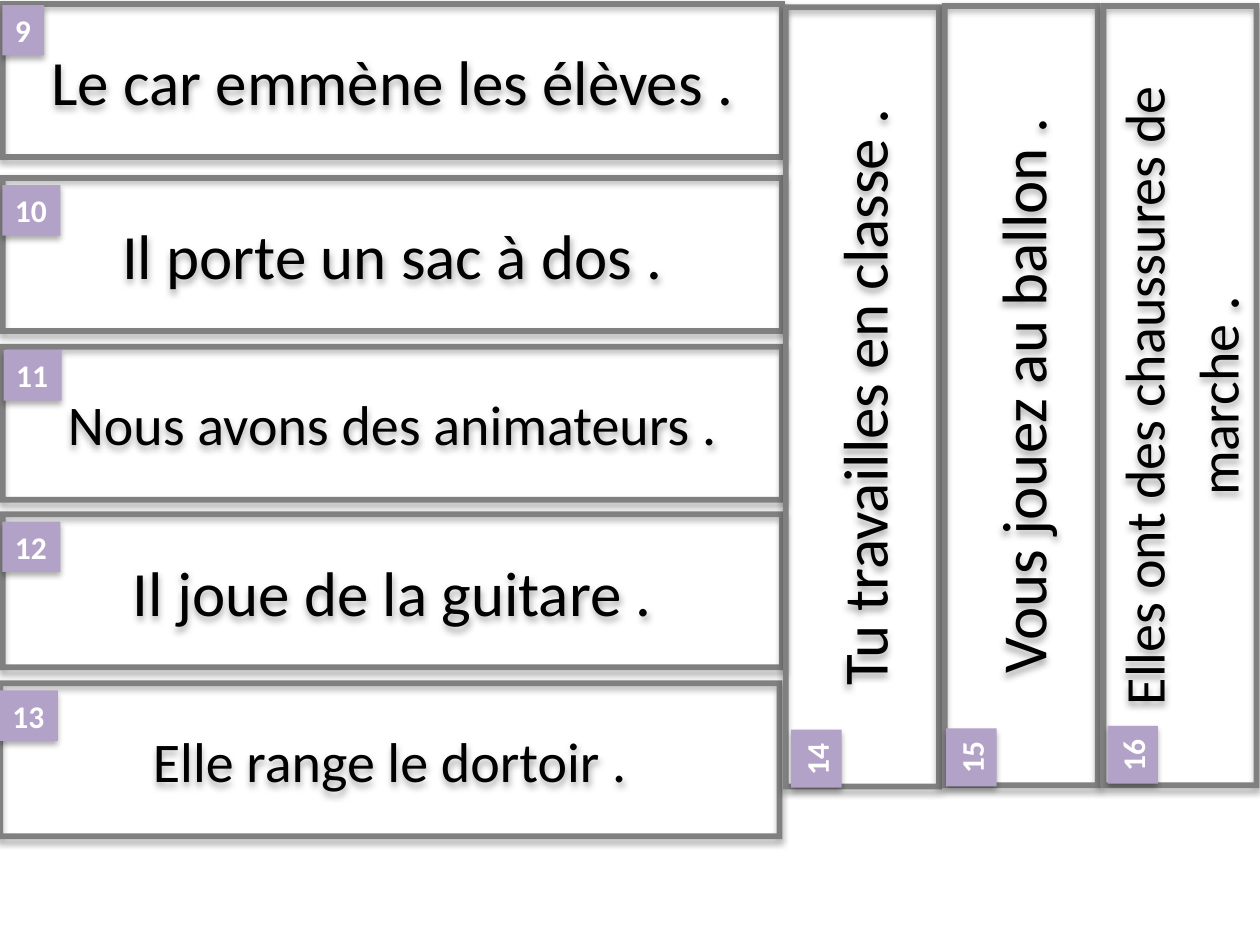
import pptx
import pptx.dml.color
import pptx.enum.shapes
import pptx.enum.text
import pptx.oxml
import pptx.oxml.ns
import pptx.util
from pptx.util import Inches

# Content: sentence parts with sizes, card position, badge position
ROW_CARDS = [
    ([("Le car emmène les élèves .", 36)], (0, 0.01), (0.02, 0.04)),
    ([("Il porte un sac à dos .", 36)], (0, 1.39), (0.02, 1.47)),
    ([("Nous avons des animateurs .", 32)], (0, 2.73), (0.03, 2.78)),
    ([("Il joue de la guitare .", 36)], (0, 4.06), (0.02, 4.14)),
    ([("Elle range le dortoir .", 32)], (-0.02, 5.4), (0, 5.48)),
]
COLUMN_CARDS = [
    ([("Tu travailles en classe .", 36)], (3.73, 2.52), (6.25, 5.82)),
    ([("Vous jouez au ballon .", 36)], (4.99, 2.51), (7.48, 5.81)),
    ([("Elles ont des chaussures de marche ", 32), (".", 36)],
     (6.25, 2.51), (8.76, 5.79)),
]
FIRST_NUMBER = 9
CARD_SIZE = (6.23, 1.26)
BADGE_HEIGHT = 0.4
FONT = "Calibri"
SHADOW = (
    '<a:outerShdw %s blurRad="44450" dist="27940" dir="5400000" algn="ctr" '
    'rotWithShape="0"><a:srgbClr val="000000"><a:alpha val="32000"/>'
    '</a:srgbClr></a:outerShdw>' % pptx.oxml.ns.nsdecls("a")
)


def color(hex_value):
    return pptx.dml.color.RGBColor.from_string(hex_value)


def add_block(slide, kind, position, size, fill, rotation):
    shape = slide.shapes.add_shape(
        kind, *(Inches(value) for value in (*position, *size)))
    shape.rotation = rotation
    shape.fill.solid()
    shape.fill.fore_color.rgb = color(fill)
    shape.line.fill.background()
    shape.shadow.inherit = False
    effects = shape._element.spPr.find(pptx.oxml.ns.qn("a:effectLst"))
    effects.append(pptx.oxml.parse_xml(SHADOW))
    return shape


def add_card(slide, parts, position, rotation):
    card = add_block(slide, pptx.enum.shapes.MSO_SHAPE.FRAME, position,
                     CARD_SIZE, "808080", rotation)
    card.adjustments[0] = 0.036
    frame = card.text_frame
    frame.word_wrap = True
    frame.vertical_anchor = pptx.enum.text.MSO_ANCHOR.MIDDLE
    paragraph = frame.paragraphs[0]
    paragraph.alignment = pptx.enum.text.PP_ALIGN.CENTER
    for text, size in parts:
        run = paragraph.add_run()
        run.text = text
        run.font.name = FONT
        run.font.size = pptx.util.Pt(size)
        run.font.color.rgb = color("000000")


def add_badge(slide, number, position, rotation):
    width = 0.33 if number < 10 else 0.46
    badge = add_block(slide, pptx.enum.shapes.MSO_SHAPE.RECTANGLE, position,
                      (width, BADGE_HEIGHT), "B3A2C7", rotation)
    frame = badge.text_frame
    frame.word_wrap = False
    frame.auto_size = pptx.enum.text.MSO_AUTO_SIZE.SHAPE_TO_FIT_TEXT
    frame.vertical_anchor = pptx.enum.text.MSO_ANCHOR.TOP
    paragraph = frame.paragraphs[0]
    paragraph.text = str(number)
    paragraph.alignment = pptx.enum.text.PP_ALIGN.LEFT
    paragraph.font.name = FONT
    paragraph.font.size = pptx.util.Pt(18)
    paragraph.font.bold = True
    paragraph.font.color.rgb = color("FFFFFF")


def main():
    presentation = pptx.Presentation()
    presentation.slide_width = Inches(10)
    presentation.slide_height = Inches(7.5)
    slide = presentation.slides.add_slide(presentation.slide_layouts[6])

    cards = [(*card, 0) for card in ROW_CARDS]
    cards += [(*card, 270) for card in COLUMN_CARDS]

    # Sentence cards, then the numbers on top
    for parts, position, _, rotation in cards:
        add_card(slide, parts, position, rotation)
    for number, (_, _, position, rotation) in enumerate(cards, FIRST_NUMBER):
        add_badge(slide, number, position, rotation)

    presentation.save("out.pptx")


if __name__ == "__main__":
    main()
